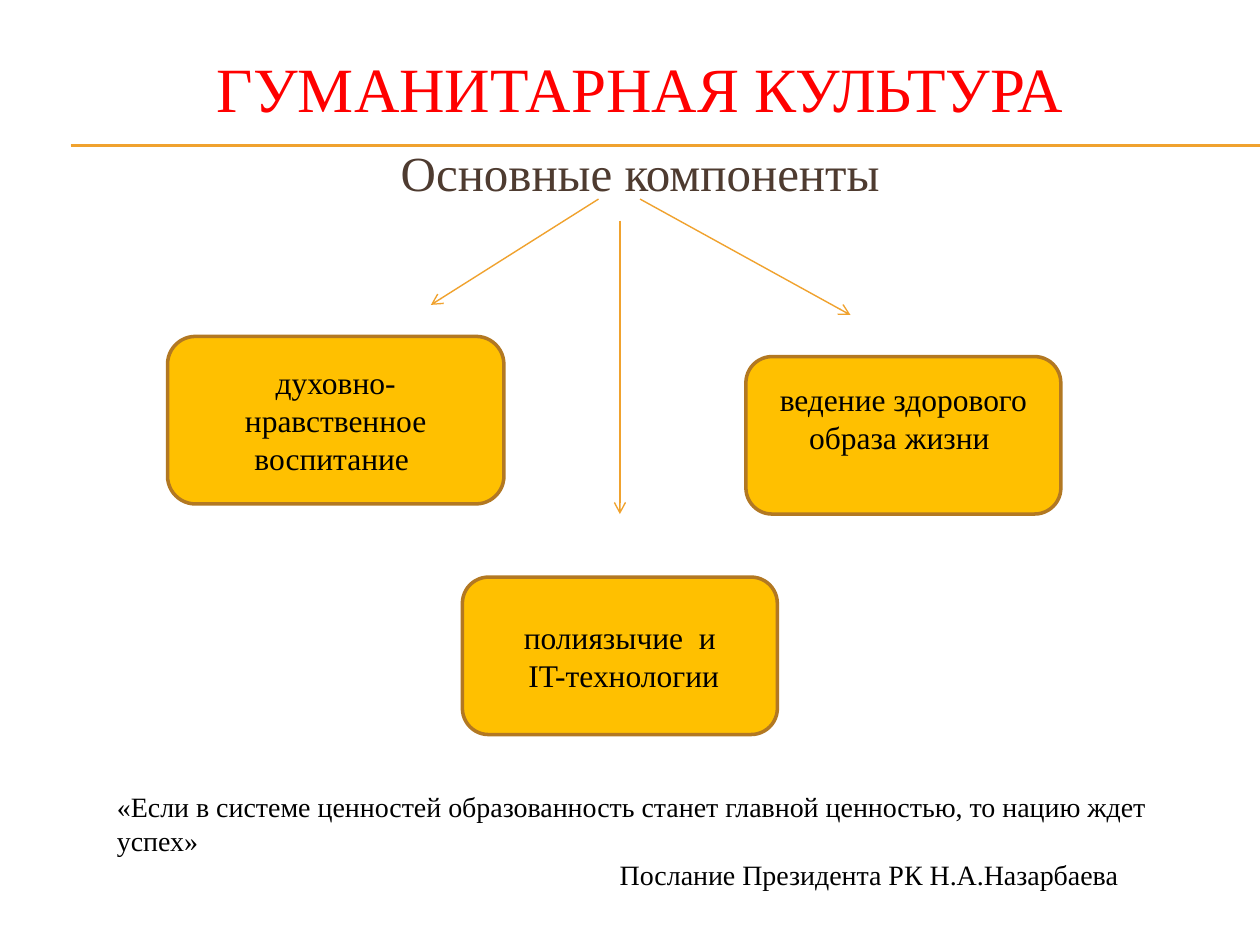
"""Build a slide on the components of humanitarian culture."""
from pptx import Presentation
from pptx.dml.color import RGBColor
from pptx.enum.shapes import MSO_CONNECTOR, MSO_SHAPE
from pptx.enum.text import MSO_ANCHOR, PP_ALIGN
from pptx.oxml.ns import qn
from pptx.util import Inches, Pt
from lxml.etree import SubElement

TITLE = "ГУМАНИТАРНАЯ КУЛЬТУРА"
HEAD = "Основные компоненты"
QUOTE = "«Если в системе ценностей образованность станет главной ценностью, то нацию ждет успех»"
SOURCE = "Послание Президента РК Н.А.Назарбаева"
CARDS = [
    (["духовно-нравственное воспитание "], (1.33, 2.67, 2.67, 1.33), 0.05),
    (["ведение здорового образа жизни "], (5.92, 2.83, 2.5, 1.25), 0.32),
    (["полиязычие  и", " IT-технологии"], (3.67, 4.58, 2.5, 1.25), 0.05),
]
RULES = [(0.56, y, 10, y) for y in (1.15, 1.16)]
ARROWS = [(5.08, 1.58, 6.75, 2.5), (4.75, 1.58, 3.42, 2.42), (4.92, 1.75, 4.92, 4.08)]
GOLD, AMBER, BROWN = "F0A22E", "FFC000", "B27822"


def color(code):
    return RGBColor.from_string(code)


def write(shape, lines, size, code="000000", align=PP_ALIGN.CENTER, anchor=MSO_ANCHOR.MIDDLE):
    frame = shape.text_frame
    frame.word_wrap = True
    frame.vertical_anchor = anchor
    frame.text = "\n".join(lines)
    for para in frame.paragraphs:
        para.alignment = align
        font = para.font
        font.name, font.size = "Times New Roman", Pt(size)
        font.color.rgb = color(code)
    return frame


def draw(shapes, ends, width, arrow=False):
    line = shapes.add_connector(MSO_CONNECTOR.STRAIGHT, *map(Inches, ends))
    line.line.color.rgb = color(GOLD)
    line.line.width = Pt(width)
    if arrow:
        SubElement(line.line._get_or_add_ln(), qn("a:tailEnd"), type="arrow")
    SubElement(line._element.spPr, qn("a:effectLst"))


def place(shape, box):
    shape.left, shape.top, shape.width, shape.height = map(Inches, box)


def main():
    deck = Presentation()
    deck.slide_width, deck.slide_height = Inches(10), Inches(7.5)
    slide = deck.slides.add_slide(deck.slide_layouts[5])
    shapes = slide.shapes

    for ends in RULES:
        draw(shapes, ends, 0.75)
    place(shapes.title, (0.33, 0.25, 9.5, 0.88))
    write(shapes.title, [TITLE], 36, "FF0000")

    head = shapes.add_textbox(*map(Inches, (0.33, 1.08, 9.5, 0.6)))
    write(head, [HEAD], 28, "4E3B30", anchor=MSO_ANCHOR.TOP)

    for lines, box, base in CARDS:
        card = shapes.add_shape(MSO_SHAPE.ROUNDED_RECTANGLE, *map(Inches, box))
        card.shadow.inherit = False
        card.fill.solid()
        card.fill.fore_color.rgb = color(AMBER)
        card.line.color.rgb = color(BROWN)
        card.line.width = Pt(2)
        write(card, lines, 18).margin_bottom = Inches(base)

    for ends in ARROWS:
        draw(shapes, ends, 0.79, arrow=True)

    note = shapes.add_textbox(*map(Inches, (0.83, 6.22, 8.67, 0.95)))
    frame = write(note, [QUOTE, SOURCE], 16, align=PP_ALIGN.LEFT, anchor=MSO_ANCHOR.TOP)
    frame.paragraphs[1]._p.get_or_add_pPr().set("marL", str(Inches(3.99)))

    deck.save("out.pptx")


if __name__ == "__main__":
    main()
